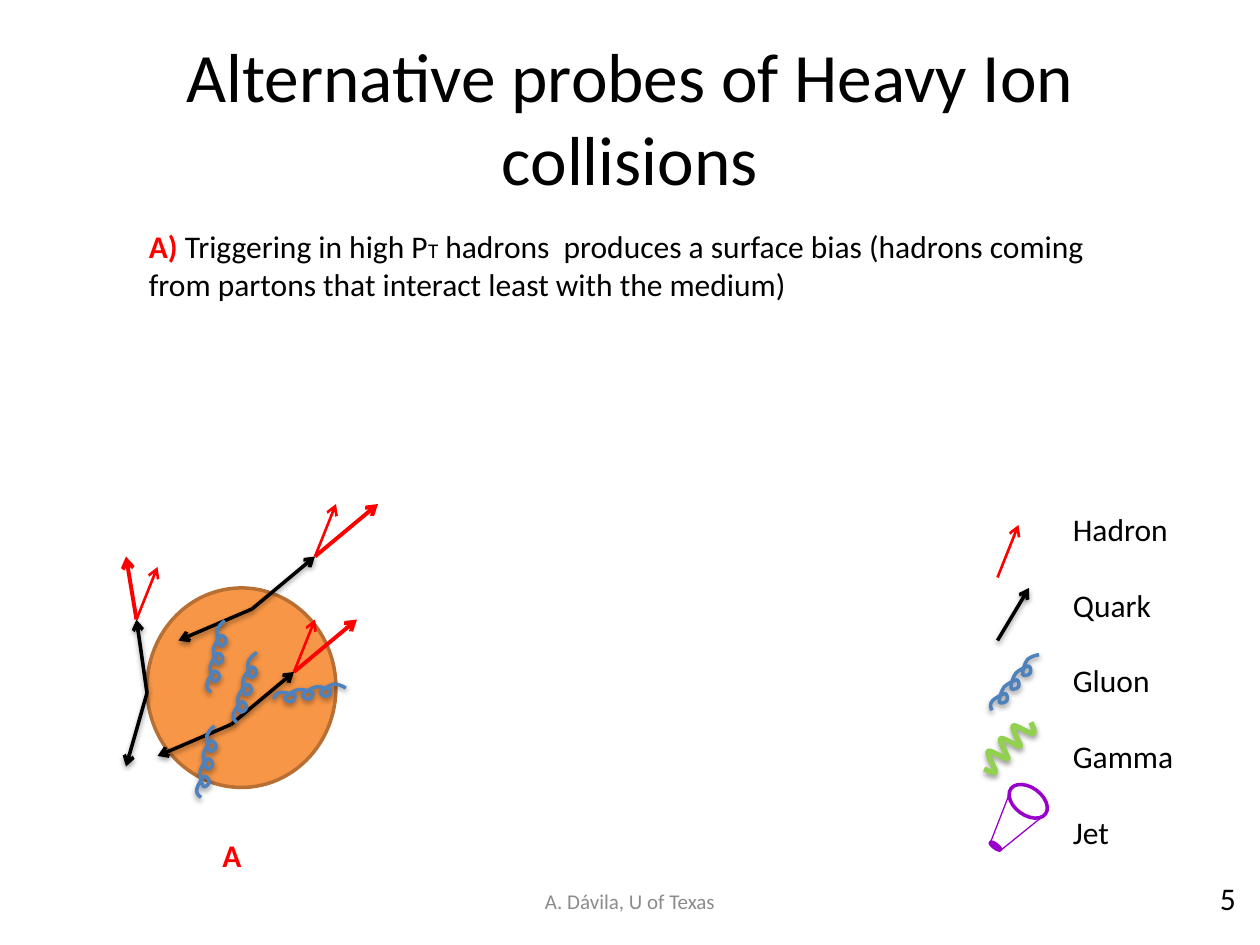
"""Build the slide on probes of heavy ion collisions, with its collision sketch and legend."""
from lxml.etree import SubElement
from pptx import Presentation
from pptx.dml.color import RGBColor
from pptx.enum.shapes import MSO_CONNECTOR, MSO_SHAPE
from pptx.enum.text import MSO_ANCHOR, PP_ALIGN
from pptx.oxml.ns import qn
from pptx.util import Pt

BLACK = RGBColor(0x00, 0x00, 0x00)
GRAY = RGBColor(0x8C, 0x8C, 0x8C)
RED = RGBColor(0xFF, 0x00, 0x00)
ORANGE = RGBColor(0xF7, 0x96, 0x46)
BROWN = RGBColor(0xB7, 0x6F, 0x34)
BLUE = RGBColor(0x4F, 0x81, 0xBD)
GREEN = RGBColor(0x92, 0xD0, 0x50)
PURPLE = RGBColor(0x99, 0x00, 0xCC)

BODY = {"size": Pt(18), "color": BLACK}
LABEL = {"size": Pt(18), "color": RED, "bold": True}
TITLE = {"size": Pt(39.6), "color": BLACK}
FOOTER = {"size": Pt(12), "color": GRAY}
SUBSCRIPT = {"size": Pt(12), "color": BLACK}
CENTERED = {"alignment": PP_ALIGN.CENTER}
LEGEND_GAP = 21.6

TEXTS = [
    ((36, 21.6, 648, 90), MSO_ANCHOR.MIDDLE, CENTERED,
     [[("Alternative probes of Heavy Ion collisions", TITLE)]]),
    ((78, 126, 552, 51), MSO_ANCHOR.TOP, {},
     [[("A) ", LABEL), ("Triggering in high P", BODY), ("T", SUBSCRIPT),
       (" hadrons  produces a surface bias (hadrons coming from partons "
        "that interact least with the medium)", BODY)]]),
    ((120, 474, 60, 29), MSO_ANCHOR.TOP, {}, [[("A", LABEL)]]),
    ((606, 288, 90, 204), MSO_ANCHOR.TOP, {"space_after": Pt(LEGEND_GAP)},
     [[(name, BODY)] for name in ("Hadron", "Quark", "Gluon", "Gamma", "Jet")]),
    ((246, 500.5, 228, 29), MSO_ANCHOR.MIDDLE, CENTERED,
     [[("A. Dávila, U of Texas", FOOTER)]]),
    ((690, 499, 18, 29), MSO_ANCHOR.TOP, {}, [[("5", BODY)]]),
]

ELLIPSES = [
    ((84, 336, 108, 114), 0, ORANGE, BROWN),
    ((575.3, 450, 24.5, 15.8), 36.2, None, PURPLE),
    ((565.2, 482.4, 7.2, 2.2), 36.2, None, PURPLE),
]

LINE_STYLES = {
    "quark": {"color": BLACK, "width": 2, "arrow": True, "shadow": True},
    "hadron": {"color": RED, "width": 1.5, "arrow": True},
    "leading hadron": {"color": RED, "width": 2.25, "arrow": True},
    "jet": {"color": PURPLE, "width": 0.75},
}

LINES = [
    ("hadron", (570, 330), (582, 300)),
    ("quark", (570, 366), (588, 336)),
    ("jet", (571.7, 486), (597.6, 465.1)),
    ("jet", (565.9, 481.7), (578.2, 450)),
    ("quark", (144, 348), (180, 318)),
    ("quark", (132, 414), (168, 384)),
    ("hadron", (180, 318), (192, 288)),
    ("leading hadron", (180, 318), (216, 288)),
    ("hadron", (168, 384), (180, 354)),
    ("leading hadron", (168, 384), (204, 354)),
    ("quark", (144, 348), (102, 366)),
    ("quark", (132, 414), (90, 432)),
    ("quark", (84, 396), (72, 438)),
    ("quark", (84, 396), (78, 354)),
    ("leading hadron", (78, 354), (72, 318)),
    ("hadron", (78, 354), (90, 324)),
]

COILS = {
    "gluon": {
        "color": BLUE, "width": 2, "length": 41.6, "period": 10.3,
        "head": [(0, 0), (0.9, -2), (1.8, -3.3), (4.4, -3.3)],
        "loop": [(2.2, 0), (7, 2.1), (7.8, 2.9), (8.4, 4.3), (6, 6.3), (5.3, 6.2),
                 (3.8, 6.6), (1.2, 4.1), (2, 3.5), (3, 2.2), (7.6, 0.1), (10.3, 0)],
        "end": [(37.4, -2.9), (39.4, -1.9), (41.6, 0)],
    },
    "gamma": {
        "color": GREEN, "width": 3, "length": 38.2, "period": 10.15,
        "head": [(0.5, -0.3), (1.5, 2.7), (3, 6.2), (4.1, 5.3)],
        "loop": [(1, -1.1), (3.7, -11.5), (5.2, -11),
                 (6.7, -11.4), (8.7, -0.4), (10.15, 0)],
        "end": [(36.1, 6), (37.2, 3), (38.2, 0)],
    },
}
COIL_LOOPS = 3

COIL_PLACES = [
    ("gluon", (580.3, 390), 310.3),
    ("gamma", (575.6, 426.2), 314.6),
    ("gluon", (177.1, 396.4), 351.2),
    ("gluon", (141.1, 392.8), 286),
    ("gluon", (118.8, 435.2), 280.7),
    ("gluon", (124.6, 375), 280.7),
]


def set_values(target, values):
    for name, value in values.items():
        if name == "color":
            target.color.rgb = value
        else:
            setattr(target, name, value)


def finish_line(shape, color, width, arrow=False, shadow=False):
    set_values(shape.line, {"color": color, "width": Pt(width)})
    properties = shape._element.spPr
    if arrow:
        SubElement(properties.find(qn("a:ln")), qn("a:tailEnd"), type="arrow")
    effects = SubElement(properties, qn("a:effectLst"))
    if shadow:
        outer = SubElement(effects, qn("a:outerShdw"), blurRad=str(Pt(3.1)),
                           dist=str(Pt(1.6)), dir="5400000", rotWithShape="0")
        tint = SubElement(outer, qn("a:srgbClr"), val=str(BLACK))
        SubElement(tint, qn("a:alpha"), val="38000")


def add_text(page, place, anchor, para_format, paragraphs):
    frame = page.shapes.add_textbox(*map(Pt, place)).text_frame
    set_values(frame, {"word_wrap": True, "vertical_anchor": anchor})
    for index, spans in enumerate(paragraphs):
        para = frame.add_paragraph() if index else frame.paragraphs[0]
        set_values(para, para_format)
        for text, span_format in spans:
            span = para.add_run()
            span.text = text
            set_values(span.font, {"name": "Calibri", **span_format})


def add_ellipse(page, place, rotation, fill, line):
    ellipse = page.shapes.add_shape(MSO_SHAPE.OVAL, *map(Pt, place))
    ellipse.rotation = rotation
    if fill is None:
        ellipse.fill.background()
    else:
        ellipse.fill.solid()
        ellipse.fill.fore_color.rgb = fill
    finish_line(ellipse, line, 2)


def add_line(page, style, start, end):
    line = page.shapes.add_connector(MSO_CONNECTOR.STRAIGHT, *map(Pt, start + end))
    finish_line(line, **LINE_STYLES[style])


def add_coil(page, kind, center, rotation):
    coil = COILS[kind]
    first_x, first_y = coil["head"][-1]
    loops = [(first_x + turn * coil["period"] + x, first_y + y)
             for turn in range(COIL_LOOPS) for x, y in coil["loop"]]
    left, middle = center[0] - coil["length"] / 2, center[1]
    points = [(Pt(left + x), Pt(middle + y)) for x, y in coil["head"] + loops + coil["end"]]
    builder = page.shapes.build_freeform(*points[0])
    builder.add_line_segments(points[1:], close=False)
    shape = builder.convert_to_shape()
    outline = shape._element.spPr.find(".//" + qn("a:path"))
    segments = outline.findall(qn("a:lnTo"))
    for index in range(0, len(segments), 3):
        curve = SubElement(outline, qn("a:cubicBezTo"))
        for segment in segments[index:index + 3]:
            curve.append(segment[0])
            outline.remove(segment)
    shape.rotation = rotation
    shape.fill.background()
    finish_line(shape, coil["color"], coil["width"], shadow=True)


def main():
    deck = Presentation()
    set_values(deck, {"slide_width": Pt(720), "slide_height": Pt(540)})
    page = deck.slides.add_slide(deck.slide_layouts[6])
    for add, items in ((add_ellipse, ELLIPSES), (add_line, LINES),
                       (add_coil, COIL_PLACES), (add_text, TEXTS)):
        for item in items:
            add(page, *item)
    deck.save("out.pptx")


if __name__ == "__main__":
    main()
